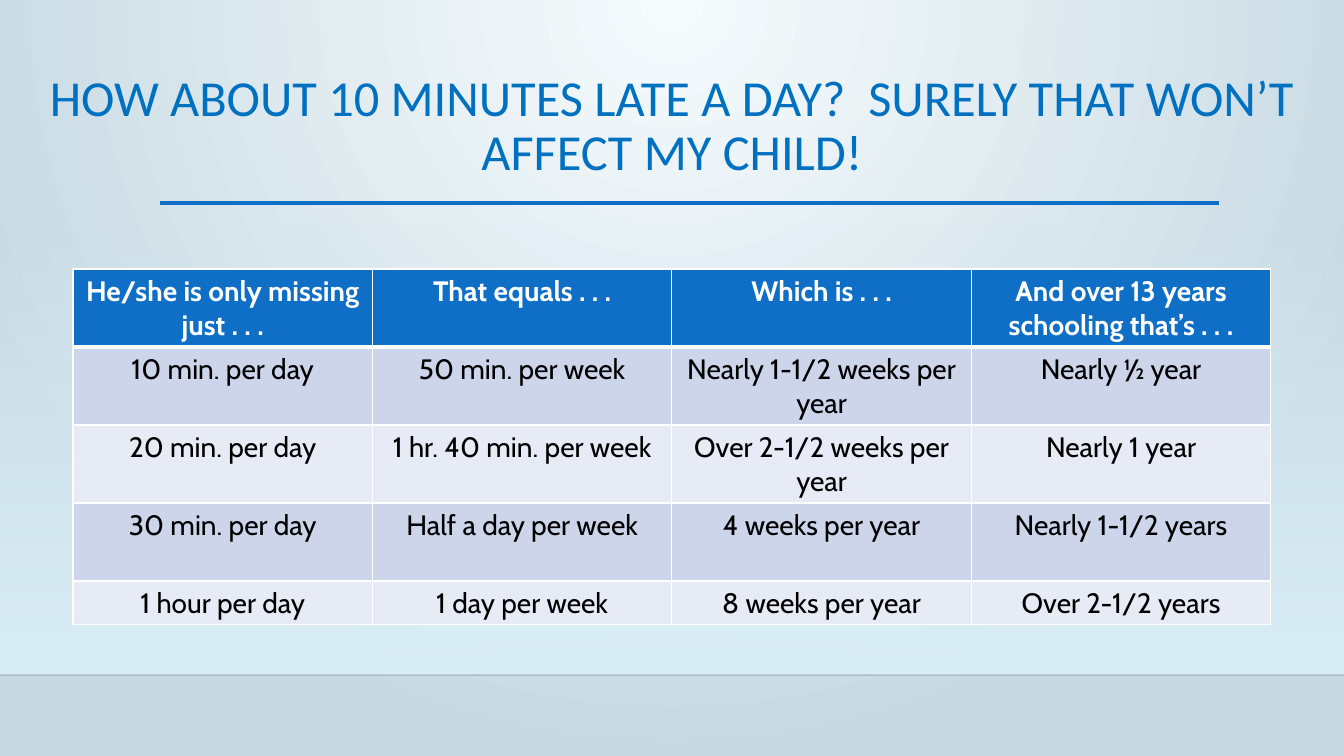
from dataclasses import dataclass

from lxml.etree import SubElement
from pptx import Presentation
from pptx.dml.color import RGBColor
from pptx.enum.shapes import MSO_CONNECTOR, MSO_SHAPE
from pptx.enum.text import MSO_ANCHOR, PP_ALIGN
from pptx.oxml import parse_xml
from pptx.oxml.ns import nsdecls, qn
from pptx.util import Pt

PX = 914400 / 100.8


@dataclass(frozen=True)
class Theme:
    title_color: str = "0070C0"
    accent: str = "0F6FC6"
    glow: str = "F6FBFD"
    backdrop: str = "C7D9E2"
    wall: str = "DBEFF9"
    black: str = "000000"
    white: str = "FFFFFF"
    bands: tuple = ("CCD5EA", "E7EBF5")
    title_font: str = "Calibri"
    table_font: str = "Cabin"
    title_size: int = 36
    table_size: int = 20


theme = Theme()


def px(*lengths):
    """Turn pixel lengths into a list of EMU lengths."""
    return [round(length * PX) for length in lengths]


def set_gradient(properties, stops, direction):
    """Swap a solid fill for a gradient; stops are (percent, colour, alpha percent)."""
    stop_xml = "".join(
        f'<a:gs pos="{position * 1000}"><a:srgbClr val="{color}">'
        f'<a:alpha val="{alpha * 1000}"/></a:srgbClr></a:gs>'
        for position, color, alpha in stops
    )
    gradient = parse_xml(
        f'<a:gradFill {nsdecls("a")} rotWithShape="1">'
        f"<a:gsLst>{stop_xml}</a:gsLst>{direction}</a:gradFill>"
    )
    properties.replace(properties.find(qn("a:solidFill")), gradient)


presentation = Presentation()
presentation.slide_width, presentation.slide_height = px(1344, 756)
slide = presentation.slides.add_slide(presentation.slide_layouts[6])

# Background and wall
slide.background.fill.solid()
slide.background.fill.fore_color.rgb = RGBColor.from_string(theme.backdrop)
set_gradient(
    slide.element.find(".//" + qn("p:bgPr")),
    [(0, theme.glow, 100), (100, theme.backdrop, 100)],
    '<a:path path="circle"><a:fillToRect l="43000" t="0" r="43000" b="100000"/></a:path>',
)

wall = slide.shapes.add_shape(MSO_SHAPE.RECTANGLE, *px(0, 223, 1344, 452))
wall.shadow.inherit = False
wall.line.fill.background()
wall.fill.solid()
wall.fill.fore_color.rgb = RGBColor.from_string(theme.wall)
set_gradient(
    wall.element.spPr,
    [(0, theme.wall, 0), (100, theme.wall, 100)],
    '<a:lin ang="5400000" scaled="0"/>',
)

# Floor edge and title rule
for left, right, y, color, width, alpha in [
    (0, 1344, 675, theme.black, 1, 20),
    (160, 1219, 203, theme.accent, 2.5, 100),
]:
    rule = slide.shapes.add_connector(MSO_CONNECTOR.STRAIGHT, *px(left, y, right, y))
    rule.line.color.rgb = RGBColor.from_string(color)
    rule.line.width = Pt(width)
    line_color = rule.element.spPr.find(".//" + qn("a:srgbClr"))
    SubElement(line_color, qn("a:alpha"), val=str(alpha * 1000))
    SubElement(rule.element.spPr, qn("a:effectLst"))

# Title
title = slide.shapes.add_textbox(*px(38, 68, 1268, 184))
title.text_frame.word_wrap = True
title.text_frame.vertical_anchor = MSO_ANCHOR.TOP
paragraph = title.text_frame.paragraphs[0]
paragraph.text = "HOW ABOUT 10 MINUTES LATE A DAY?  SURELY THAT WON’T AFFECT MY CHILD!"
paragraph.alignment = PP_ALIGN.CENTER
paragraph.line_spacing = 0.9
paragraph.font.name = theme.title_font
paragraph.font.size = Pt(theme.title_size)
paragraph.font.color.rgb = RGBColor.from_string(theme.title_color)

# Lateness table
rows = [
    ["He/she is only missing just . . .", "That equals . . .", "Which is . . .",
     "And over 13 years schooling that’s . . ."],
    ["10 min. per day", "50 min. per week", "Nearly 1-1/2 weeks per year", "Nearly ½ year"],
    ["20 min. per day", "1 hr. 40 min. per week", "Over 2-1/2 weeks per year", "Nearly 1 year"],
    ["30 min. per day", "Half a day per week", "4 weeks per year", "Nearly 1-1/2 years"],
    ["1 hour per day", "1 day per week", "8 weeks per year", "Over 2-1/2 years"],
]
row_heights = px(78, 78, 78, 78, 43)
table = slide.shapes.add_table(len(rows), len(rows[0]), *px(73, 269, 1198, 355)).table
table.horz_banding = False
for column in table.columns:
    column.width = px(299.5)[0]

for row_index, texts in enumerate(rows):
    table.rows[row_index].height = row_heights[row_index]
    is_header = row_index == 0
    fill_color = theme.accent if is_header else theme.bands[(row_index - 1) % 2]
    text_color = theme.white if is_header else theme.black
    border_widths = {"L": 1, "R": 1, "T": 3 if row_index == 1 else 1, "B": 3 if is_header else 1}
    for column_index, text in enumerate(texts):
        cell = table.cell(row_index, column_index)
        cell.text = text
        paragraph = cell.text_frame.paragraphs[0]
        paragraph.alignment = PP_ALIGN.CENTER
        paragraph.font.name = theme.table_font
        paragraph.font.size = Pt(theme.table_size)
        paragraph.font.bold = is_header
        paragraph.font.color.rgb = RGBColor.from_string(text_color)
        cell_properties = cell._tc.get_or_add_tcPr()
        for side, width in border_widths.items():
            border = SubElement(cell_properties, qn(f"a:ln{side}"), w=str(Pt(width)))
            border_fill = SubElement(border, qn("a:solidFill"))
            SubElement(border_fill, qn("a:srgbClr"), val=theme.white)
        cell.fill.solid()
        cell.fill.fore_color.rgb = RGBColor.from_string(fill_color)

presentation.save("out.pptx")
